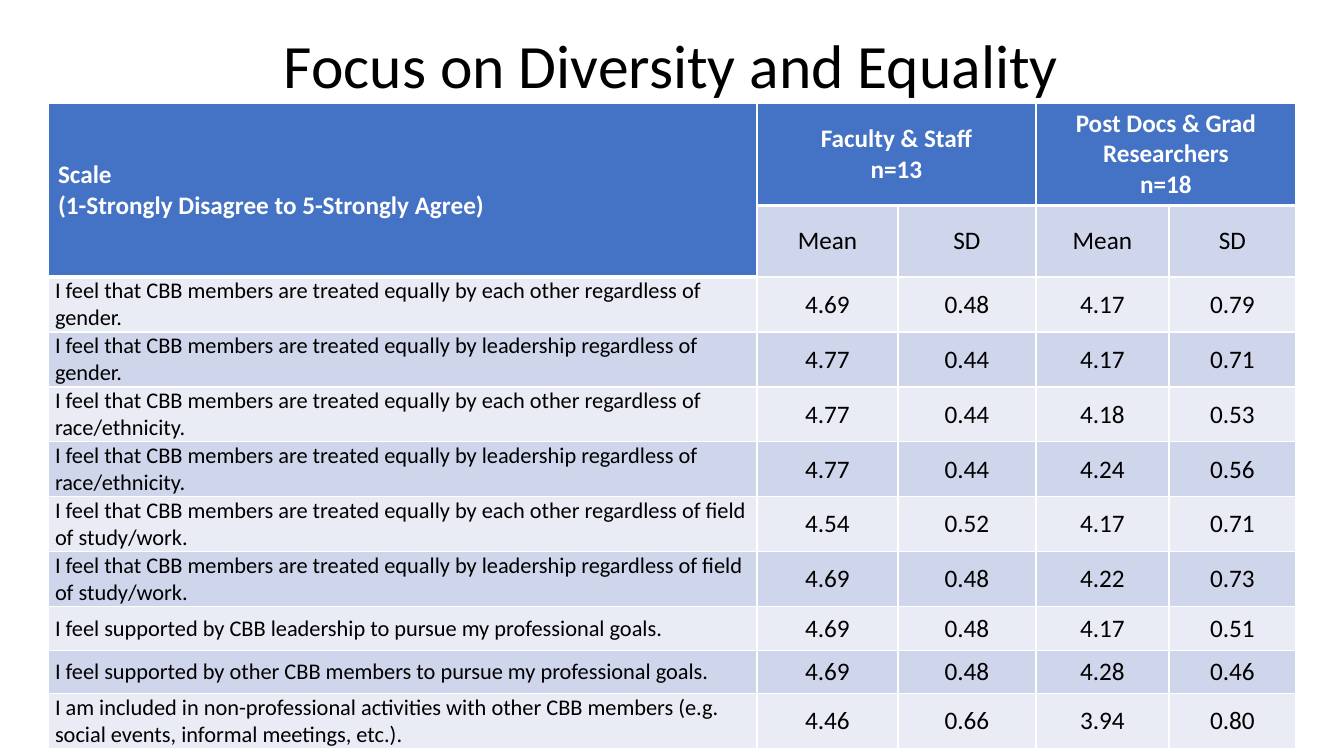
from lxml.etree import SubElement
from pptx import Presentation
from pptx.dml.color import RGBColor
from pptx.enum.text import MSO_ANCHOR as Anchor, PP_ALIGN as Align
from pptx.oxml.ns import qn
from pptx.util import Emu, Pt

EMU_PER_PX = 914400 / 100.8
FONT = "Calibri"
BLACK, WHITE = "000000", "FFFFFF"
HEADER_BLUE, BAND_DARK, BAND_LIGHT = "4472C4", "CFD5EA", "E9EBF5"
COLUMN_WIDTHS = [709, 141, 138, 133, 127]
ROW_HEIGHTS = [102, 71] + [55] * 6 + [44, 43, 55]
GROUPS = [
    ["Faculty & Staff", "n=13"],
    ["Post Docs & Grad Researchers", "n=18"],
]
SCALE_HEADING = ["Scale", "(1-Strongly Disagree to 5-Strongly Agree)"]
EQUAL = "I feel that CBB members are treated equally by "
RATINGS = [
    (EQUAL + "each other regardless of gender.", "4.69", "0.48", "4.17", "0.79"),
    (EQUAL + "leadership regardless of gender.", "4.77", "0.44", "4.17", "0.71"),
    (EQUAL + "each other regardless of race/ethnicity.", "4.77", "0.44", "4.18", "0.53"),
    (EQUAL + "leadership regardless of race/ethnicity.", "4.77", "0.44", "4.24", "0.56"),
    (EQUAL + "each other regardless of field of study/work.", "4.54", "0.52", "4.17", "0.71"),
    (EQUAL + "leadership regardless of field of study/work.", "4.69", "0.48", "4.22", "0.73"),
    ("I feel supported by CBB leadership to pursue my professional goals.",
     "4.69", "0.48", "4.17", "0.51"),
    ("I feel supported by other CBB members to pursue my professional goals.",
     "4.69", "0.48", "4.28", "0.46"),
    ("I am included in non-professional activities with other CBB members "
     "(e.g. social events, informal meetings, etc.).", "4.46", "0.66", "3.94", "0.80"),
]


def px(length):
    return Emu(round(length * EMU_PER_PX))


def color(value):
    return RGBColor.from_string(value)


def write(frame, lines, size=18, ink=BLACK, bold=False, align=Align.CENTER, spacing=None):
    frame.word_wrap = True
    for index, line in enumerate(lines):
        para = frame.add_paragraph() if index else frame.paragraphs[0]
        para.alignment = align
        if spacing:
            para.line_spacing = spacing
        span = para.add_run()
        span.text = line
        span.font.name = FONT
        span.font.size = Pt(size)
        span.font.bold = bold
        span.font.color.rgb = color(ink)


def add_border(cell, side, points):
    line = SubElement(cell._tc.get_or_add_tcPr(), qn("a:ln" + side), w=str(Pt(points)))
    fill = SubElement(line, qn("a:solidFill"))
    SubElement(fill, qn("a:srgbClr"), val=WHITE)


def style_cell(cell, fill, bottom=1):
    for side, points in (("L", 1), ("R", 1), ("T", 1), ("B", bottom)):
        add_border(cell, side, points)
    cell.fill.solid()
    cell.fill.fore_color.rgb = color(fill)
    cell.vertical_anchor = Anchor.MIDDLE


def fill_header(table):
    for column in range(5):
        style_cell(table.cell(0, column), HEADER_BLUE, bottom=3)
        style_cell(table.cell(1, column), BAND_DARK if column else HEADER_BLUE)
    table.cell(0, 0).merge(table.cell(1, 0))
    write(table.cell(0, 0).text_frame, SCALE_HEADING, ink=WHITE, bold=True, align=Align.LEFT)
    for column, lines in zip((1, 3), GROUPS):
        table.cell(0, column).merge(table.cell(0, column + 1))
        write(table.cell(0, column).text_frame, lines, ink=WHITE, bold=True)
        for offset, label in enumerate(("Mean", "SD")):
            write(table.cell(1, column + offset).text_frame, [label])


def fill_ratings(table):
    for row, rating in enumerate(RATINGS, start=2):
        for column, value in enumerate(rating):
            cell = table.cell(row, column)
            style_cell(cell, BAND_DARK if row % 2 else BAND_LIGHT)
            cell.margin_left = cell.margin_right = px(7)
            cell.margin_top = cell.margin_bottom = 0
            if column:
                write(cell.text_frame, [value])
            else:
                write(cell.text_frame, [value], size=16, align=Align.LEFT)


def add_title(page, left, top, width, height):
    title = page.shapes.title
    title.left, title.top, title.width, title.height = map(px, (left, top, width, height))
    title.text_frame.vertical_anchor = Anchor.MIDDLE
    write(title.text_frame, ["Focus on Diversity and Equality"], size=44, spacing=0.9)


def add_ratings_table(page, left, top):
    box = page.shapes.add_table(
        len(ROW_HEIGHTS), len(COLUMN_WIDTHS), px(left), px(top),
        px(sum(COLUMN_WIDTHS)), px(sum(ROW_HEIGHTS)))
    table = box.table
    for column, width in zip(table.columns, COLUMN_WIDTHS):
        column.width = px(width)
    for row, height in zip(table.rows, ROW_HEIGHTS):
        row.height = px(height)
    fill_header(table)
    fill_ratings(table)


def main():
    deck = Presentation()
    deck.slide_width, deck.slide_height = px(1344), px(756)
    page = deck.slides.add_slide(deck.slide_layouts[5])
    add_title(page, 92, -4, 1159, 146)
    add_ratings_table(page, 48, 103)
    deck.save("out.pptx")


if __name__ == "__main__":
    main()
